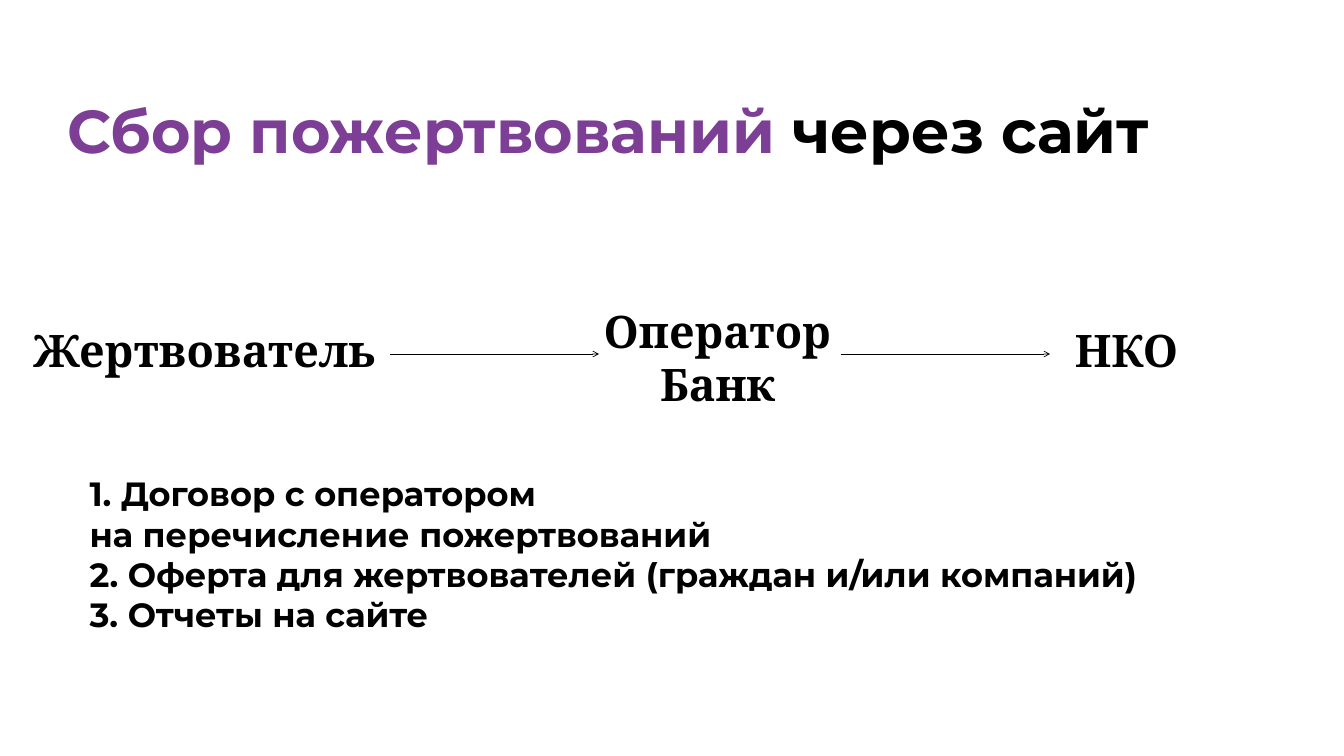
from pptx import Presentation, util as u
from pptx.dml.color import RGBColor
from pptx.enum import shapes, text
from pptx.oxml.ns import qn
from lxml import etree

PX = 914400 / 67.2
BLACK = "000000"
PURPLE = "7D3F95"
HEADING_FONT = "Montserrat"
FLOW_FONT = "Cambria"


def px(length):
    return u.Emu(round(length * PX))


def colour(value):
    return RGBColor.from_string(value)


def add_text(slide, box, paragraphs, font, size, align=text.PP_ALIGN.LEFT,
             anchor=text.MSO_ANCHOR.TOP, spacing=None):
    """Add a bold text box; each paragraph is a list of (wording, colour) runs."""
    shape = slide.shapes.add_textbox(*map(px, box))
    frame = shape.text_frame
    frame.word_wrap = True
    frame.vertical_anchor = anchor
    for index, runs in enumerate(paragraphs):
        paragraph = frame.add_paragraph() if index else frame.paragraphs[0]
        paragraph.alignment = align
        paragraph.line_spacing = spacing
        for wording, run_colour in runs:
            run = paragraph.add_run()
            run.text = wording
            run.font.name = font
            run.font.size = u.Pt(size)
            run.font.bold = True
            run.font.color.rgb = colour(run_colour)


def add_arrow(slide, left, y, length):
    arrow = slide.shapes.add_connector(
        shapes.MSO_CONNECTOR.STRAIGHT, px(left), px(y), px(left + length), px(y))
    arrow.line.color.rgb = colour(BLACK)
    arrow.line.width = u.Pt(0.75)
    etree.SubElement(arrow.line._get_or_add_ln(), qn("a:tailEnd"), type="arrow")
    etree.SubElement(arrow._element.spPr, qn("a:effectLst"))


def add_title(slide, box):
    runs = [("Сбор пожертвований ", PURPLE), ("через сайт", BLACK)]
    add_text(slide, box, [runs], HEADING_FONT, 64.8,
             anchor=text.MSO_ANCHOR.MIDDLE, spacing=0.9)


def add_donation_flow(slide, box):
    """Draw the way of the money: donor, operator and bank, non-profit."""
    left, top, width, height = box
    steps = [
        (0, 19, 367, 61, ["Жертвователь"]),
        (513, 0, 367, height, ["Оператор", "Банк"]),
        (width - 329, 19, 329, 61, ["НКО"]),
    ]
    for x, y, step_width, step_height, lines in steps:
        add_text(slide, (left + x, top + y, step_width, step_height),
                 [[(line, BLACK)] for line in lines],
                 FLOW_FONT, 48, align=text.PP_ALIGN.CENTER)
    for x in (369, 820):
        add_arrow(slide, left + x, top + 54, 209)


def add_requirements(slide, box):
    lines = [
        "1. Договор с оператором",
        "на перечисление пожертвований",
        "2. Оферта для жертвователей (граждан и/или компаний)",
        "3. Отчеты на сайте",
    ]
    add_text(slide, box, [[(line, BLACK)] for line in lines], HEADING_FONT, 36)


def main():
    presentation = Presentation()
    presentation.slide_width = px(1344)
    presentation.slide_height = px(756)
    slide = presentation.slides.add_slide(presentation.slide_layouts[6])
    add_title(slide, (61, 71, 1210, 126))
    add_donation_flow(slide, (21, 300, 1270, 116))
    add_requirements(slide, (83, 470, 1125, 169))
    presentation.save("out.pptx")


if __name__ == "__main__":
    main()
